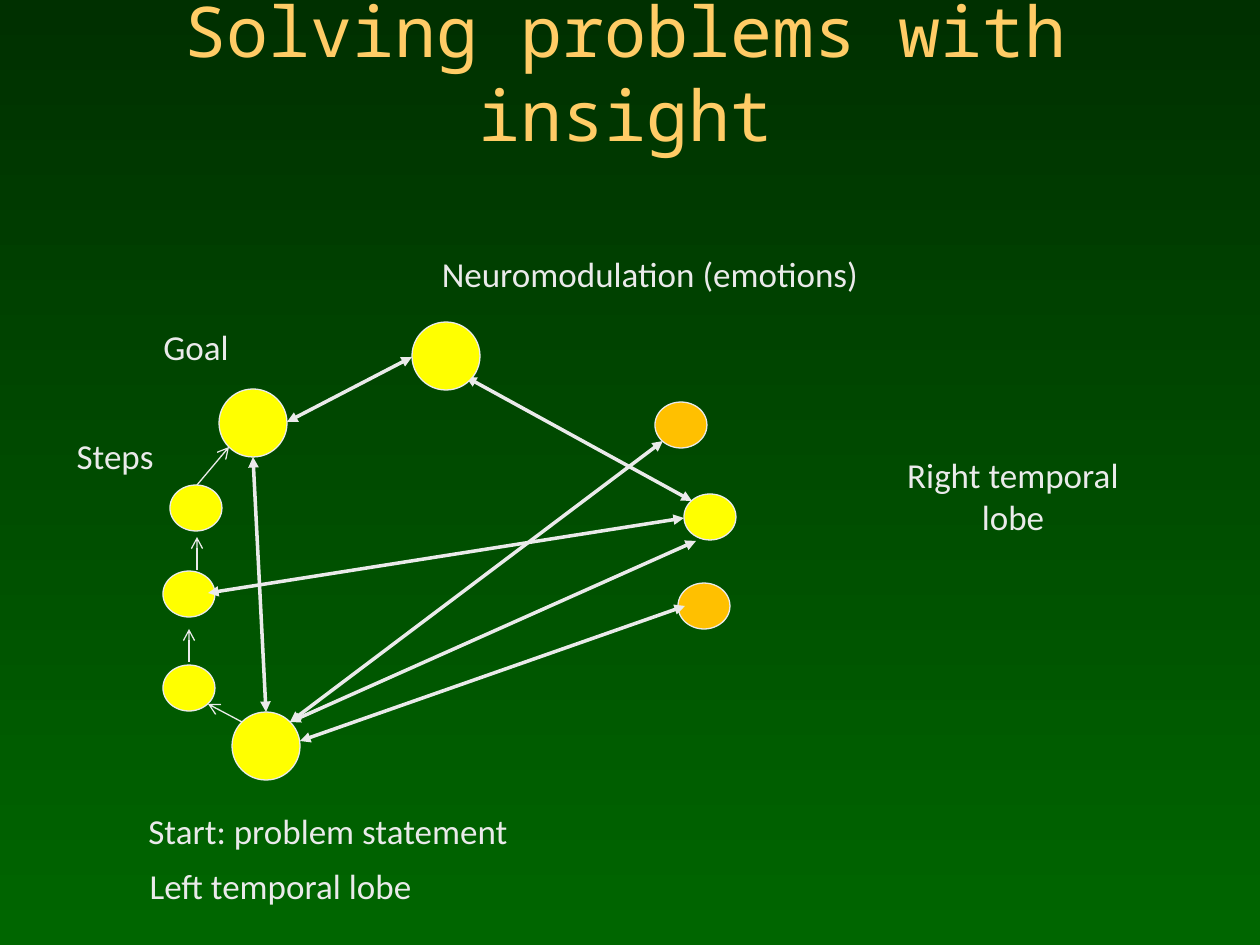
from dataclasses import dataclass
from lxml.etree import SubElement
from pptx import Presentation
from pptx.dml.color import RGBColor
from pptx.enum.shapes import MSO_CONNECTOR, MSO_SHAPE
from pptx.enum.text import MSO_ANCHOR, MSO_AUTO_SIZE, PP_ALIGN
from pptx.oxml.ns import qn
from pptx.util import Pt


@dataclass(frozen=True)
class Theme:
    top: str = "003000"
    base: str = "006600"
    gold: str = "FFCC66"
    pale: str = "EAEAEA"
    yellow: str = "FFFF00"
    orange: str = "FFC000"
    shade: str = "000000"
    head: int = 40
    body: int = 20
    thin: float = 0.75
    thick: float = 2
    mono: str = "Noto Sans Mono"
    sans: str = "Calibri"


LOOK = Theme()
SCALE = 914400 / 126
BIG = (68, 68)
SMALL = (52, 46)

PATHS = [(232, 712, BIG), (163, 665, SMALL), (219, 389, BIG),
         (163, 571, SMALL), (170, 485, SMALL), (684, 494, SMALL)]
IDEAS = [(678, 583), (655, 402)]
LINKS = [(300, 741, 685, 606), (290, 722, 696, 541), (290, 722, 663, 441),
         (208, 593, 684, 518), (253, 457, 266, 712), (466, 377, 692, 501),
         (287, 422, 412, 357)]
STEPS = [(242, 722, 208, 704), (189, 662, 189, 629),
         (197, 570, 197, 537), (197, 485, 229, 447)]
LABELS = [((839, 447, 348, 97), ["Right temporal", "lobe"]),
          ((115, 858, 331, 55), ["Left temporal lobe"]),
          ((115, 803, 426, 55), ["Start: problem statement"]),
          ((136, 319, 120, 55), ["Goal"]),
          ((55, 428, 120, 55), ["Steps"]),
          ((386, 246, 528, 55), ["Neuromodulation (emotions)"])]


def px(*nums):
    return [round(n * SCALE) for n in nums]


def rgb(code):
    return RGBColor.from_string(code)


def add_run(para, text, size, face, color):
    para.alignment = PP_ALIGN.CENTER
    run = para.add_run()
    run.text = text
    run.font.size = Pt(size)
    run.font.name = face
    run.font.color.rgb = rgb(color)
    return run


def add_shade(run):
    props = run.font.fill._xPr
    effect = props.makeelement(qn("a:effectLst"), {})
    props.find(qn("a:solidFill")).addnext(effect)
    shade = SubElement(effect, qn("a:outerShdw"), dist="38100", dir="2700000")
    SubElement(shade, qn("a:srgbClr"), val=LOOK.shade)


def set_back(slide):
    fill = slide.background.fill
    fill.gradient()
    fill.gradient_angle = 270
    for stop, code, place in zip(fill.gradient_stops, (LOOK.top, LOOK.base), (0, 1)):
        stop.color.rgb = rgb(code)
        stop.position = place


def set_title(slide, text):
    title = slide.shapes.title
    title.left, title.top, title.width, title.height = px(134, 26, 983, 92)
    frame = title.text_frame
    frame.word_wrap = True
    frame.auto_size = MSO_AUTO_SIZE.NONE
    frame.vertical_anchor = MSO_ANCHOR.MIDDLE
    add_shade(add_run(frame.paragraphs[0], text, LOOK.head, LOOK.mono, LOOK.gold))


def add_node(slide, left, top, size, color):
    node = slide.shapes.add_shape(MSO_SHAPE.OVAL, *px(left, top, *size))
    node.shadow.inherit = False
    node.fill.solid()
    node.fill.fore_color.rgb = rgb(color)
    node.line.color.rgb = rgb(LOOK.pale)
    node.line.width = Pt(LOOK.thin)


def add_line(slide, ends, width, **tips):
    link = slide.shapes.add_connector(MSO_CONNECTOR.STRAIGHT, *px(*ends))
    link.line.color.rgb = rgb(LOOK.pale)
    link.line.width = Pt(width)
    props = link.line._get_or_add_ln()
    for tag, kind in tips.items():
        SubElement(props, qn(f"a:{tag}"), type=kind)
    SubElement(link._element.spPr, qn("a:effectLst"))


def add_label(slide, box, lines):
    frame = slide.shapes.add_textbox(*px(*box)).text_frame
    frame.word_wrap = True
    frame.auto_size = MSO_AUTO_SIZE.SHAPE_TO_FIT_TEXT
    for i, text in enumerate(lines):
        para = frame.add_paragraph() if i else frame.paragraphs[0]
        add_run(para, text, LOOK.body, LOOK.sans, LOOK.pale)


def main():
    deck = Presentation()
    deck.slide_width, deck.slide_height = px(1260, 945)
    slide = deck.slides.add_slide(deck.slide_layouts[5])
    set_back(slide)
    set_title(slide, "Solving problems with insight")
    for left, top, size in PATHS:
        add_node(slide, left, top, size, LOOK.yellow)
    for left, top in IDEAS:
        add_node(slide, left, top, SMALL, LOOK.orange)
    for ends in STEPS:
        add_line(slide, ends, LOOK.thin, tailEnd="arrow")
    for ends in LINKS:
        add_line(slide, ends, LOOK.thick, headEnd="triangle", tailEnd="triangle")
    add_node(slide, 412, 322, BIG, LOOK.yellow)
    for box, lines in LABELS:
        add_label(slide, box, lines)
    deck.save("out.pptx")


if __name__ == "__main__":
    main()
